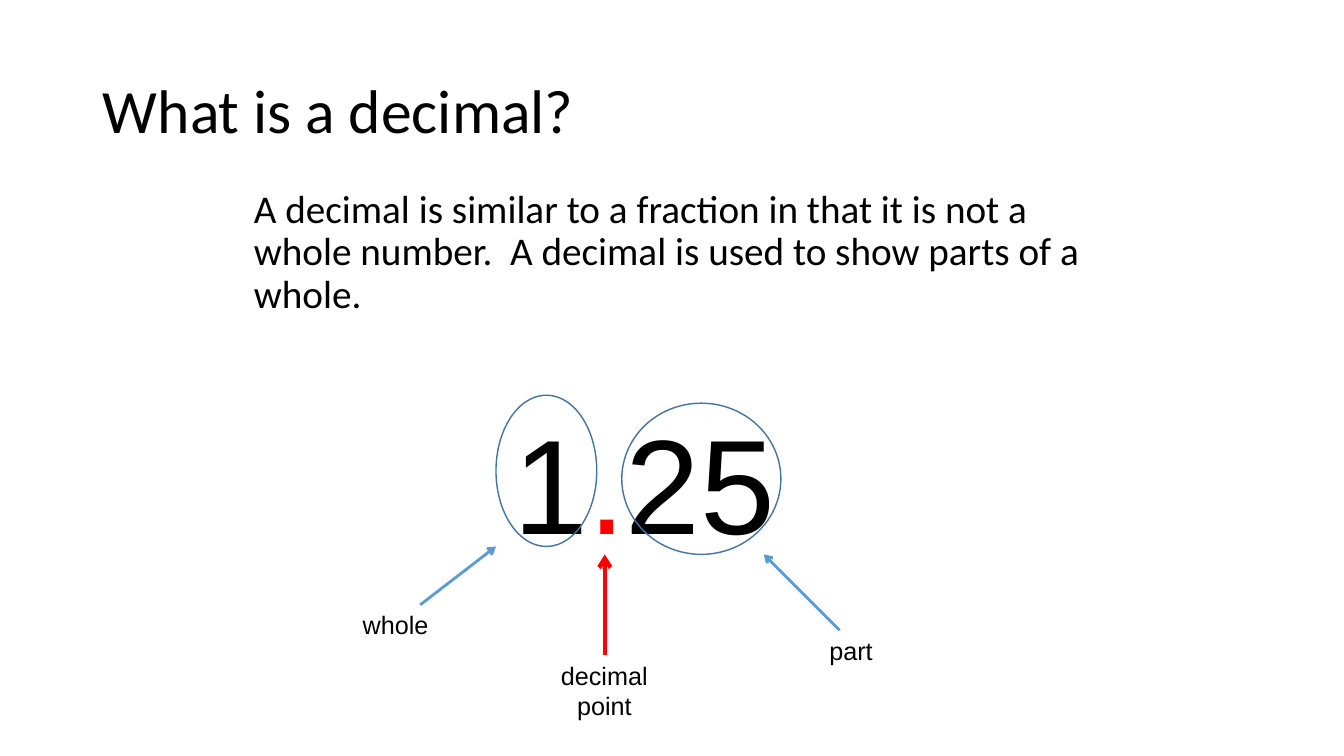
from dataclasses import dataclass

from lxml import etree
from pptx import Presentation
from pptx.dml.color import RGBColor
from pptx.enum.shapes import MSO_CONNECTOR, MSO_SHAPE
from pptx.enum.text import MSO_ANCHOR, MSO_AUTO_SIZE, PP_ALIGN
from pptx.oxml.ns import qn
from pptx.util import Cm, Pt

STRAIGHT = MSO_CONNECTOR.STRAIGHT
OVAL = MSO_SHAPE.OVAL
TOP, MIDDLE = MSO_ANCHOR.TOP, MSO_ANCHOR.MIDDLE
NO_FIT = MSO_AUTO_SIZE.NONE
LEFT, CENTER = PP_ALIGN.LEFT, PP_ALIGN.CENTER


@dataclass(frozen=True)
class Theme:
    heading_font: str = "Calibri"
    label_font: str = "Arial"
    title_size: int = 44
    body_size: int = 28
    number_size: int = 96
    label_size: int = 18
    black: str = "000000"
    red: str = "FF0000"
    blue: str = "5B9BD5"
    outline: str = "43739E"


THEME = Theme()

TITLE = ("What is a decimal?", (2.34, 1.02, 29.21, 3.68))
BODY = (
    "A decimal is similar to a fraction in that it is not a whole number.  "
    "A decimal is used to show parts of a whole.",
    (5.51, 4.65, 22.86, 5.92),
)
NUMBER = (
    [("1", THEME.black), (".", THEME.red), ("25", THEME.black)],
    (12.7, 9.96, 7.19, 4.37),
)
RINGS = [(12.5, 9.96, 2.54, 3.81), (15.67, 10.16, 4.01, 3.81)]
LABELS = [
    ("decimal point", (13.54, 16.51, 3.38, 1.8), CENTER),
    ("whole", (8.89, 15.24, 3.38, 1.02), LEFT),
    ("part", (20.65, 15.88, 3.38, 1.02), LEFT),
]
ARROWS = [
    ((15.24, 16.51), (15.24, 13.97), THEME.red, 3),
    ((10.59, 15.24), (12.5, 13.77), THEME.blue, 2),
    ((21.16, 15.88), (19.25, 13.97), THEME.blue, 2),
]


def lengths(values):
    return [Cm(v) for v in values]


def style_run(r, font, size, color):
    r.font.name = font
    r.font.size = Pt(size)
    r.font.color.rgb = RGBColor.from_string(color)


def set_text(sp, pieces, font, size, align=LEFT, anchor=TOP):
    tf = sp.text_frame
    tf.word_wrap = True
    tf.auto_size = NO_FIT
    tf.vertical_anchor = anchor
    p = tf.paragraphs[0]
    p.alignment = align
    for text, color in pieces:
        r = p.add_run()
        r.text = text
        style_run(r, font, size, color)
    return p


def add_text(s, box, pieces, font, size, align=LEFT):
    return set_text(s.shapes.add_textbox(*lengths(box)), pieces, font, size, align)


def add_ring(s, box):
    sp = s.shapes.add_shape(OVAL, *lengths(box))
    sp.shadow.inherit = False
    sp.fill.background()
    sp.line.color.rgb = RGBColor.from_string(THEME.outline)
    sp.line.width = Pt(1)


def add_arrow(s, start, end, color, width):
    cxn = s.shapes.add_connector(STRAIGHT, *lengths(start + end))
    cxn.line.color.rgb = RGBColor.from_string(color)
    cxn.line.width = Pt(width)
    etree.SubElement(cxn.line._get_or_add_ln(), qn("a:tailEnd"), type="arrow")
    etree.SubElement(cxn._element.spPr, qn("a:effectLst"))


def main():
    prs = Presentation()
    prs.slide_width, prs.slide_height = Cm(33.87), Cm(19.05)
    s = prs.slides.add_slide(prs.slide_layouts[5])

    text, box = TITLE
    title = s.shapes.title
    title.left, title.top, title.width, title.height = lengths(box)
    p = set_text(title, [(text, THEME.black)], THEME.heading_font,
                 THEME.title_size, anchor=MIDDLE)
    p.line_spacing = 0.9

    text, box = BODY
    p = add_text(s, box, [(text, THEME.black)], THEME.heading_font, THEME.body_size)
    p.line_spacing = 0.9
    p.space_before = Pt(10)
    p._p.get_or_add_pPr().set("marL", str(Cm(0.64)))

    pieces, box = NUMBER
    add_text(s, box, pieces, THEME.label_font, THEME.number_size)

    for box in RINGS:
        add_ring(s, box)
    for arrow in ARROWS:
        add_arrow(s, *arrow)
    for text, box, align in LABELS:
        add_text(s, box, [(text, THEME.black)], THEME.label_font,
                 THEME.label_size, align)

    prs.save("out.pptx")


if __name__ == "__main__":
    main()
